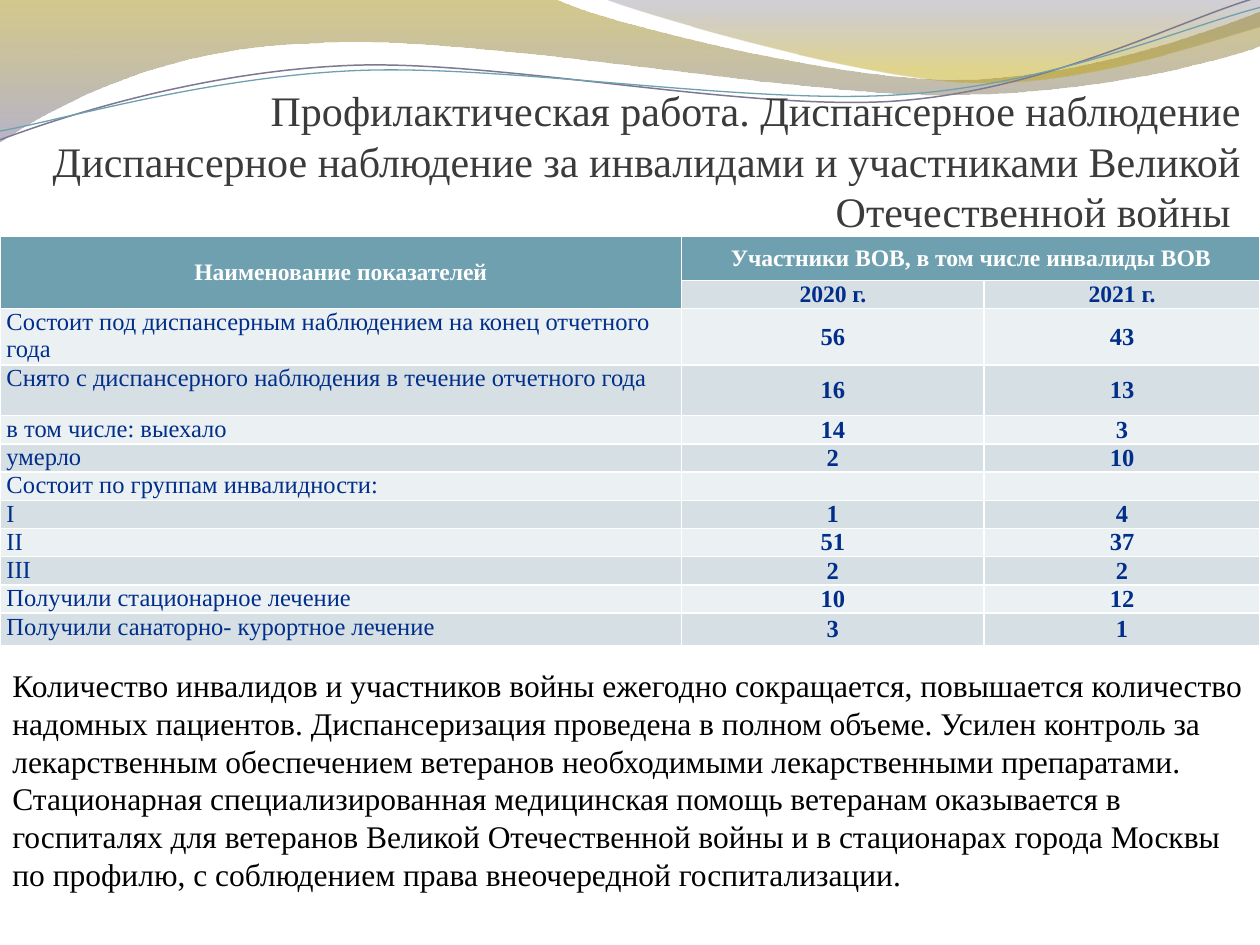
import math

from lxml import etree
from pptx import Presentation
from pptx import util as u
from pptx.dml.color import RGBColor
from pptx.enum import text
from pptx.oxml import ns

WHITE = RGBColor(0xFF, 0xFF, 0xFF)
BLACK = RGBColor(0, 0, 0)
GREY = RGBColor(0x3B, 0x3B, 0x3B)
NAVY = RGBColor(0x00, 0x2E, 0x8A)
TEAL = RGBColor(0x6E, 0xA0, 0xB0)
PALE = RGBColor(0xEB, 0xF0, 0xF2)
MIST = RGBColor(0xD5, 0xDF, 0xE4)
OLIVE = RGBColor(0x9E, 0x87, 0x00)
LILAC = RGBColor(0x7B, 0x76, 0x9C)
PLUM = RGBColor(0x66, 0x62, 0x7C)
GOLD = RGBColor(0xBD, 0xA1, 0x00)
MAUVE = RGBColor(0x7C, 0x79, 0x91)

LEFT, MID, RIGHT = text.PP_ALIGN.LEFT, text.PP_ALIGN.CENTER, text.PP_ALIGN.RIGHT
INCH = u.Cm(2.54)
FINE = 1000  # outline units per inch
TILT = 2.7  # degrees the thin curves are turned to the left


def turn(point, hub):
    """Turn a point clockwise by TILT about the hub."""
    dx, dy = point[0] - hub[0], point[1] - hub[1]
    cos, sin = math.cos(math.radians(TILT)), math.sin(math.radians(TILT))
    return hub[0] + dx * cos - dy * sin, hub[1] + dx * sin + dy * cos


class Deck:
    face = "Times New Roman"

    def __init__(self, wide, high):
        self.prs = Presentation()
        self.prs.slide_width, self.prs.slide_height = u.Cm(wide), u.Cm(high)
        self.slide = self.prs.slides.add_slide(self.prs.slide_layouts[5])

    def style(self, para, size, color, bold=False, align=LEFT):
        para.alignment = align
        look = {"name": self.face, "size": u.Pt(size), "bold": bold}
        for run in para.runs:
            for key, val in look.items():
                setattr(run.font, key, val)
            run.font.color.rgb = color

    def frame(self, tf, **extra):
        look = {"word_wrap": True, "auto_size": text.MSO_AUTO_SIZE.NONE, **extra}
        for key, val in look.items():
            setattr(tf, key, val)

    def wave(self, start, parts, closed=False, hub=None):
        """Outline of lines (2 numbers a part) and Bezier curves (6 numbers)."""
        pts = [start] + [p[i:i + 2] for p in parts for i in range(0, len(p), 2)]
        if hub:
            pts = [turn(p, hub) for p in pts]
        pts = [(x * FINE, y * FINE) for x, y in pts]
        pen = self.slide.shapes.build_freeform(*pts[0], scale=INCH / FINE)
        pen.add_line_segments(pts[1:], close=closed)
        shape = pen.convert_to_shape()
        shape.shadow.inherit = False
        # Join three line ends into one Bezier curve
        legs = iter(list(shape._element.iter(ns.qn("a:lnTo"))))
        for part in parts:
            trio = [next(legs) for _ in range(len(part) // 2)]
            if len(trio) == 3:
                bend = etree.Element(ns.qn("a:cubicBezTo"))
                trio[0].addprevious(bend)
                for leg in trio:
                    bend.append(leg[0])
                    leg.getparent().remove(leg)
        if hub:
            shape.rotation = 360 - TILT
        return shape

    def band(self, start, parts, stops):
        shape = self.wave(start, parts, True)
        shape.line.fill.background()
        shape.fill.gradient()
        shape.fill.gradient_angle = 270
        for stop, (pos, color, _) in zip(shape.fill.gradient_stops, stops):
            stop.position, stop.color.rgb = pos, color
        tags = shape._element.spPr.iter(ns.qn("a:srgbClr"))
        for tag, (_, _, alpha) in zip(tags, stops):
            etree.SubElement(tag, ns.qn("a:alpha")).set("val", str(alpha * 1000))

    def curve(self, start, parts, hub, color, width):
        shape = self.wave(start, parts, hub=hub)
        shape.fill.background()
        shape.line.color.rgb, shape.line.width = color, u.Pt(width)

    def title(self, words, box):
        shape = self.slide.shapes.title
        self.slide.shapes._spTree.append(shape._element)  # in front of the waves
        for key, val in zip(("left", "top", "width", "height"), box):
            setattr(shape, key, u.Cm(val))
        tf = shape.text_frame
        tf.text = words
        self.frame(tf, vertical_anchor=text.MSO_ANCHOR.BOTTOM,
                   margin_left=0, margin_right=0, margin_bottom=u.Cm(1))
        para = tf.paragraphs[0]
        para.line_spacing = u.Pt(28.8)
        self.style(para, 24, GREY, align=RIGHT)

    def note(self, words, box):
        tf = self.slide.shapes.add_textbox(*map(u.Cm, box)).text_frame
        tf.text = words
        self.frame(tf)
        para = tf.paragraphs[0]
        para.line_spacing = u.Pt(21.6)
        self.style(para, 18, BLACK)

    def cell(self, cell, words, fill, size, color, bold, align):
        cell.text = words
        cell.fill.solid()
        cell.fill.fore_color.rgb = fill
        top = align == LEFT
        look = {"margin_left": u.Cm(0.13), "margin_right": u.Cm(0.13),
                "margin_top": 0, "margin_bottom": 0,
                "vertical_anchor": text.MSO_ANCHOR.TOP if top else text.MSO_ANCHOR.MIDDLE}
        for key, val in look.items():
            setattr(cell, key, val)
        para = cell.text_frame.paragraphs[0]
        self.style(para, size, color, bold, align)
        if not words:  # keeps an empty row low
            end = para._p.get_or_add_endParaRPr()
            end.set("sz", "1200")
            etree.SubElement(end, ns.qn("a:latin")).set("typeface", self.face)
        # White borders go before the fill
        props = cell._tc.get_or_add_tcPr()
        for i, side in enumerate("LRTB"):
            edge = etree.Element(ns.qn("a:ln" + side), w=str(u.Pt(1)))
            solid = etree.SubElement(edge, ns.qn("a:solidFill"))
            etree.SubElement(solid, ns.qn("a:srgbClr")).set("val", str(WHITE))
            props.insert(i, edge)

    def table(self, rows, box, cols, highs):
        grid = self.slide.shapes.add_table(len(rows), len(cols), *map(u.Cm, box)).table
        for col, wide in zip(grid.columns, cols):
            col.width = u.Cm(wide)
        for row, high in zip(grid.rows, highs):
            row.height = u.Cm(high)
        for r, row in enumerate(rows):
            for c, words in enumerate(row):
                head = r == 0 or (r == 1 and c == 0)
                fill = TEAL if head else MIST if r % 2 else PALE
                self.cell(grid.cell(r, c), words, fill, 13.5 if r < 2 else 14,
                          WHITE if head else NAVY, r < 2 or c > 0,
                          MID if r < 2 or c else LEFT)
        grid.cell(0, 0).merge(grid.cell(1, 0))
        grid.cell(0, 1).merge(grid.cell(0, 2))


ROWS = [
    ("Наименование показателей", "Участники ВОВ, в том числе инвалиды ВОВ", ""),
    ("", "2020 г.", "2021 г."),
    ("Состоит под диспансерным наблюдением на конец отчетного года", "56", "43"),
    ("Снято с диспансерного наблюдения в течение отчетного года", "16", "13"),
    ("в том числе: выехало", "14", "3"),
    ("умерло", "2", "10"),
    ("Состоит по группам инвалидности:", "", ""),
    ("I", "1", "4"),
    ("II", "51", "37"),
    ("III", "2", "2"),
    ("Получили стационарное лечение", "10", "12"),
    ("Получили санаторно- курортное лечение", "3", "1"),
]


def main():
    deck = Deck(25.4, 19.05)

    # Waves along the top, points in inches
    deck.band((-0.01, 0), [
        (4.4, -0.01), (4.76, 0.17, 6.64, 0.63, 7.58, 0.63),
        (8.53, 0.63, 9.58, 0.26, 10, 0.09), (10.01, 0.36),
        (9.83, 0.44, 8.7, 0.76, 7.46, 0.75), (6.22, 0.75, 3.82, 0.28, 2.57, 0.34),
        (1.29, 0.36, 0.46, 0.83, -0.01, 1.13)], [(0, OLIVE, 45), (1, LILAC, 55)])
    deck.band((4.79, -0.01), [
        (5.09, 0.11, 6.82, 0.62, 7.69, 0.65), (8.56, 0.69, 9.61, 0.32, 10, 0.21),
        (10, 0)], [(0, PLUM, 30), (0.8, GOLD, 45)])
    deck.curve((0, 1.11), [
        (0.48, 0.93, 1.58, 0.57, 2.77, 0.52), (3.95, 0.47, 5.93, 0.89, 7.13, 0.8),
        (8.33, 0.71, 9.38, 0.15, 9.98, -0.02)], (4.99, 0.58), MAUVE, 0.85)
    deck.curve((0, 1.04), [
        (0.47, 0.96, 1.64, 0.61, 2.83, 0.56), (4.03, 0.51, 5.97, 0.84, 7.17, 0.75),
        (8.36, 0.67, 9.41, 0.21, 10, 0.06)], (5, 0.59), TEAL, 0.75)

    # Title
    deck.title("Профилактическая работа. Диспансерное наблюдение\v"
               "Диспансерное наблюдение за инвалидами и участниками Великой "
               "Отечественной войны ", (-0.58, 1.57, 25.6, 4.19))

    # Table of indicators
    deck.table(ROWS, (0, 4.77, 25.4, 8.2), (13.74, 6.1, 5.56),
               [0.88, 0.57, 1.14, 1.02] + [0.57] * 7 + [0.65])

    # Summary
    deck.note("Количество инвалидов и участников войны ежегодно сокращается, "
              "повышается количество надомных пациентов. Диспансеризация проведена "
              "в полном объеме. Усилен контроль за лекарственным обеспечением "
              "ветеранов необходимыми лекарственными препаратами. Стационарная "
              "специализированная медицинская помощь ветеранам оказывается в "
              "госпиталях для ветеранов Великой Отечественной войны и в стационарах "
              "города Москвы по профилю, с соблюдением права внеочередной "
              "госпитализации.", (0, 13.3, 25.4, 1.52))

    deck.prs.save("out.pptx")


if __name__ == "__main__":
    main()
